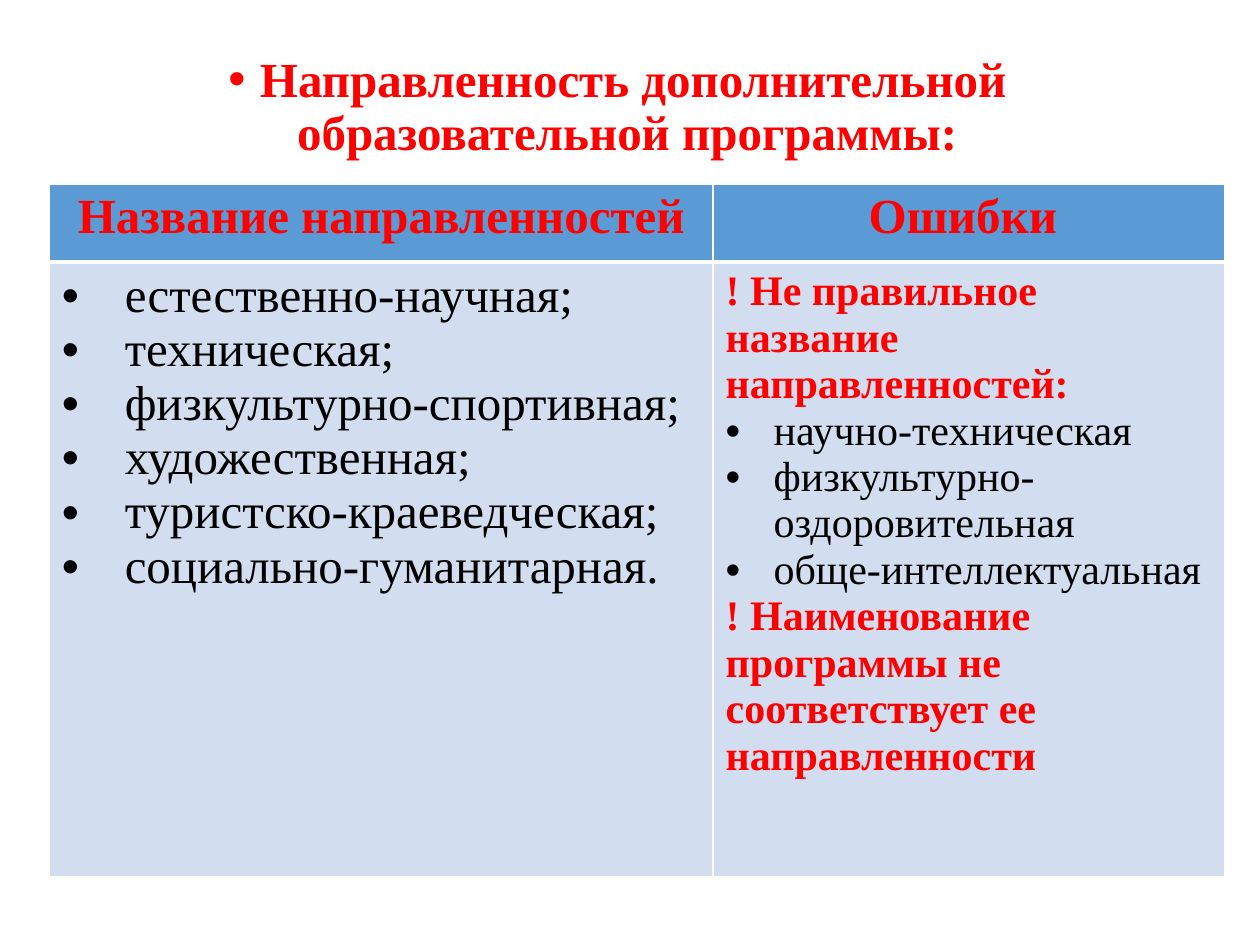
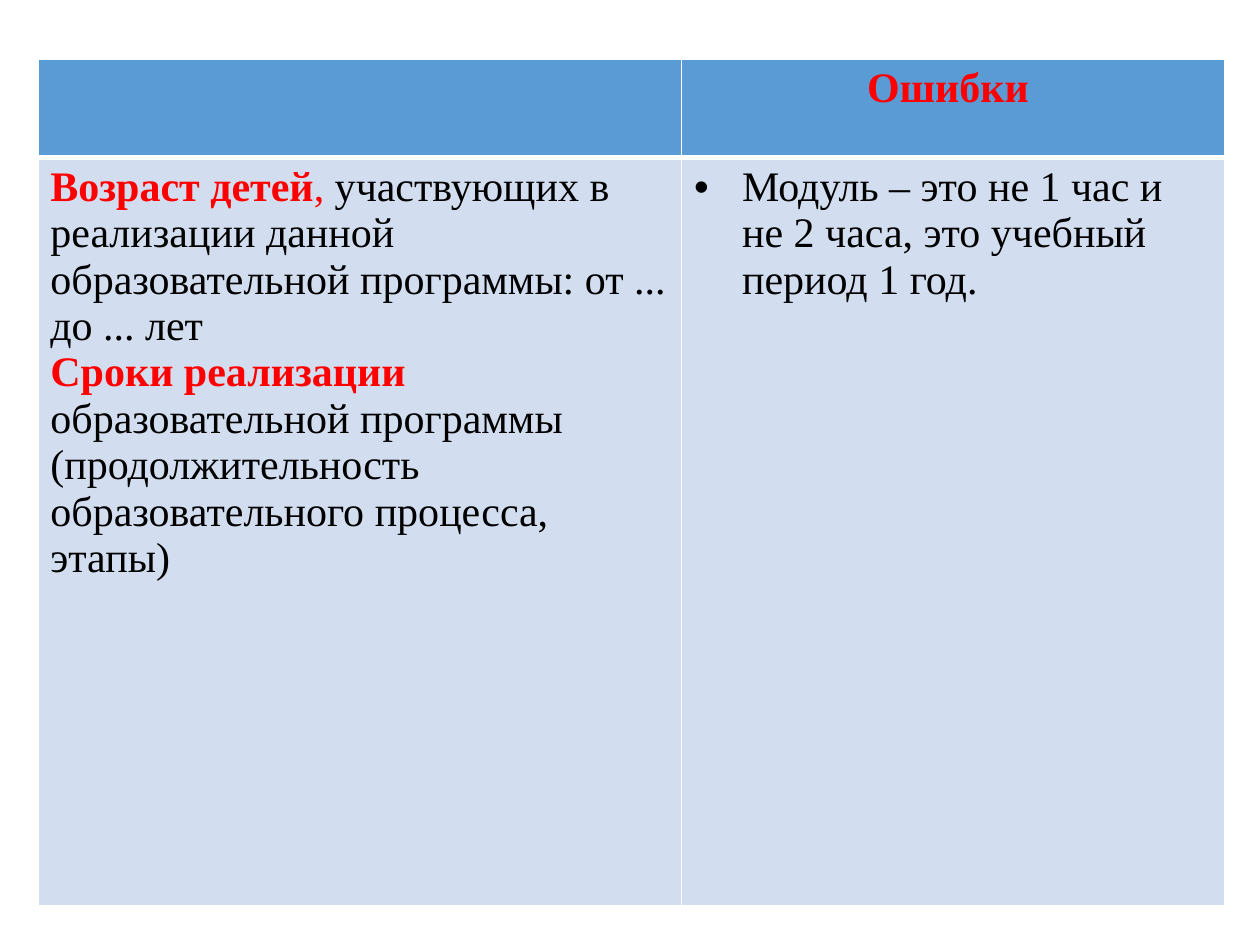
"""Build two slides about the focus, ages and terms of an educational programme."""
from dataclasses import dataclass

from lxml.etree import SubElement
from pptx import Presentation
from pptx.dml.color import RGBColor as Color
from pptx.enum.text import PP_ALIGN as Align
from pptx.oxml.ns import qn
from pptx.util import Inches, Pt


@dataclass(frozen=True)
class Theme:
    """Colours, font and type sizes shared by the slides."""
    font: str = "Times New Roman"
    accent: str = "FF0000"
    ink: str = "000000"
    header_fill: str = "5B9BD5"
    body_fill: str = "D2DEEF"
    border: str = "FFFFFF"
    large: int = 28
    medium: int = 24
    thin: int = 1
    thick: int = 3


@dataclass(frozen=True)
class Span:
    """A piece of text with one look."""
    text: str
    color: str = Theme.ink
    bold: bool = False


@dataclass(frozen=True)
class Line:
    """A paragraph made of spans, with a hanging bullet if indent is set."""
    spans: tuple
    size: int = Theme.medium
    indent: float = 0
    align: Align = Align.LEFT


def strong(text):
    """Return a bold accent span."""
    return Span(text, Theme.accent, True)


def heading(text, size):
    """Return a centred accent line."""
    return Line((strong(text),), size, align=Align.CENTER)


def bullets(size, indent, *texts):
    """Return one plain bulleted line for each text."""
    return [Line((Span(text),), size, indent) for text in texts]


def add_bullet(paragraph, indent):
    """Give a paragraph a hanging round bullet."""
    properties = paragraph._p.get_or_add_pPr()
    properties.set("marL", str(Inches(indent)))
    properties.set("indent", str(-Inches(indent)))
    SubElement(properties, qn("a:buFont"), typeface="Arial")
    SubElement(properties, qn("a:buChar"), char="•")


def write_lines(text_frame, lines):
    """Write lines into a text frame, run by run."""
    text_frame.word_wrap = True
    for index, line in enumerate(lines):
        paragraph = text_frame.add_paragraph() if index else text_frame.paragraphs[0]
        paragraph.alignment = line.align
        if line.indent:
            add_bullet(paragraph, line.indent)
        for span in line.spans:
            run = paragraph.add_run()
            run.text = span.text
            run.font.name = Theme.font
            run.font.size = Pt(line.size)
            run.font.bold = span.bold
            run.font.color.rgb = Color.from_string(span.color)


def add_title(slide, text):
    """Add a centred bulleted title in a box."""
    box = slide.shapes.add_textbox(Inches(0.49), Inches(0.39), Inches(8.82), Inches(6.36))
    title = Line((strong(text),), Theme.large, 0.25, Align.CENTER)
    write_lines(box.text_frame, [title])
    box.text_frame.paragraphs[0].line_spacing = 0.9


def set_borders(cell, top, bottom):
    """Draw the four borders of a cell, with thin sides."""
    properties = cell._tc.get_or_add_tcPr()
    widths = {"L": Theme.thin, "R": Theme.thin, "T": top, "B": bottom}
    for side, width in widths.items():
        border = SubElement(properties, qn(f"a:ln{side}"), w=str(Pt(width)))
        fill = SubElement(border, qn("a:solidFill"))
        SubElement(fill, qn("a:srgbClr"), val=Theme.border)


def add_comparison(slide, left, top, widths, heights, rows):
    """Add a table with a header row and a body row."""
    frame = slide.shapes.add_table(
        len(rows), len(widths), Inches(left), Inches(top),
        Inches(sum(widths)), Inches(sum(heights)))
    table = frame.table
    table.horz_banding = False
    for column, width in zip(table.columns, widths):
        column.width = Inches(width)
    looks = ((Theme.header_fill, Theme.thin, Theme.thick),
             (Theme.body_fill, Theme.thick, Theme.thin))
    for row, height, contents, look in zip(table.rows, heights, rows, looks):
        row.height = Inches(height)
        fill, top_width, bottom_width = look
        for cell, lines in zip(row.cells, contents):
            set_borders(cell, top_width, bottom_width)
            cell.fill.solid()
            cell.fill.fore_color.rgb = Color.from_string(fill)
            write_lines(cell.text_frame, lines)


def build_focus_slide(slide):
    """List the programme focuses and the mistakes in naming them."""
    add_title(slide, "Направленность дополнительной образовательной программы: ")
    focuses = bullets(
        Theme.large, 0.5,
        "естественно-научная;", "техническая;", "физкультурно-спортивная;",
        "художественная;", "туристско-краеведческая;", "социально-гуманитарная.")
    wrong_names = bullets(
        Theme.medium, 0.38,
        "научно-техническая", "физкультурно-оздоровительная", "обще-интеллектуальная")
    mistakes = [
        Line((strong("! Не правильное название направленностей:"),)),
        *wrong_names,
        Line((strong("! Наименование программы не соответствует ее направленности"),)),
    ]
    header = ([heading("Название направленностей", Theme.large)],
              [heading("Ошибки ", Theme.large)])
    add_comparison(slide, 0.39, 1.46, (5.27, 4.06), (0.62, 4.88),
                   (header, (focuses, mistakes)))


def build_terms_slide(slide):
    """Describe the ages and terms and the mistake about modules."""
    terms = [
        Line((strong("Возраст детей"), Span(", ", Theme.accent),
              Span("участвующих в реализации данной образовательной программы: "
                   "от ... до ... лет"))),
        Line((strong("Сроки реализации "),
              Span("образовательной программы (продолжительность "
                   "образовательного процесса, этапы)"))),
    ]
    mistakes = bullets(Theme.medium, 0.38,
                       "Модуль – это не 1 час и не 2 часа, это учебный период 1 год.")
    header = ([], [heading("Ошибки ", Theme.medium)])
    add_comparison(slide, 0.3, 0.47, (5.11, 4.31), (0.78, 5.94),
                   (header, (terms, mistakes)))


def main():
    """Build and save the presentation."""
    presentation = Presentation()
    presentation.slide_width = Inches(10)
    presentation.slide_height = Inches(7.5)
    blank = presentation.slide_layouts[6]
    for build in (build_focus_slide, build_terms_slide):
        build(presentation.slides.add_slide(blank))
    presentation.save("out.pptx")


if __name__ == "__main__":
    main()
